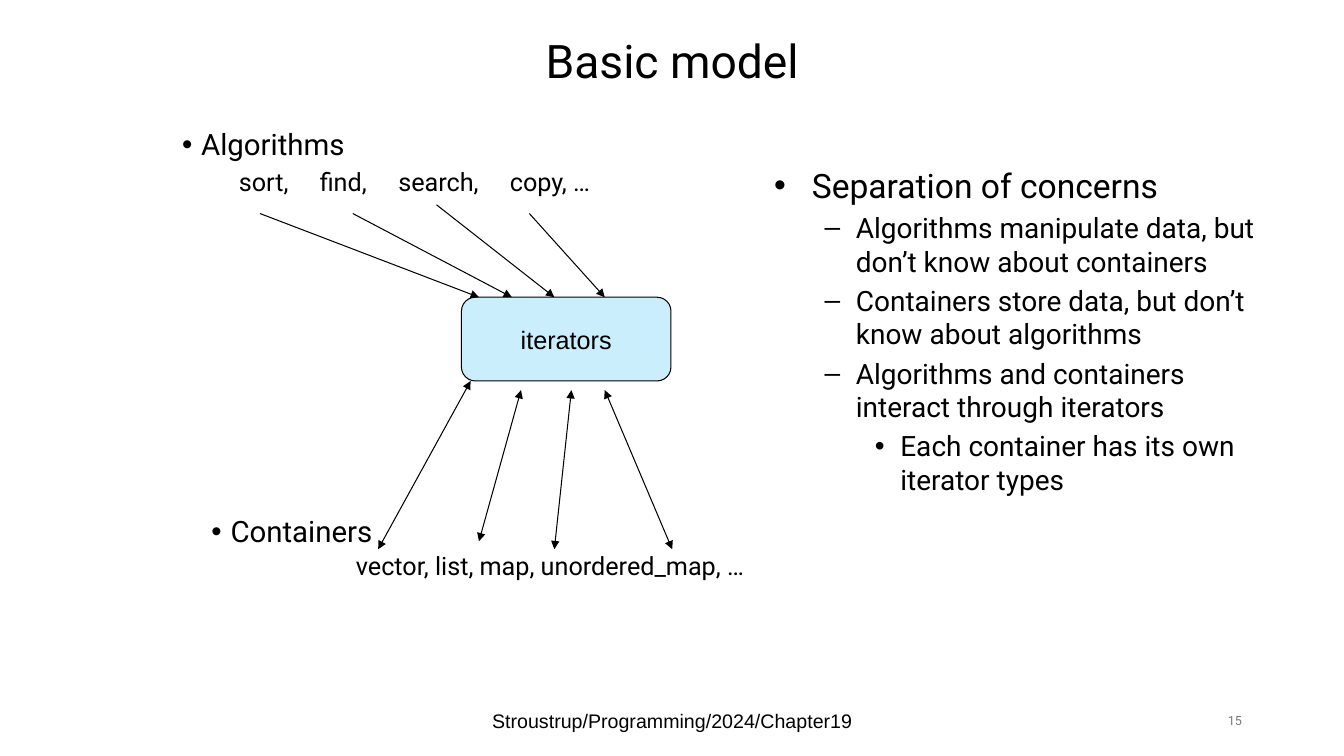
import pptx
import pptx.util
import pptx.dml.color
import pptx.enum.shapes
import pptx.enum.text
import pptx.oxml.ns
from lxml import etree

COLORS = {"black": "000000", "grey": "797979", "box": "CAEEFB"}
Cm, Pt = pptx.util.Cm, pptx.util.Pt
ALIGN = pptx.enum.text.PP_ALIGN
ANCHOR = pptx.enum.text.MSO_ANCHOR


def rgb(name):
    return pptx.dml.color.RGBColor.from_string(COLORS[name])


def add_xml(parent, tag, **attrs):
    el = etree.SubElement(parent, pptx.oxml.ns.qn(tag))
    for key, value in attrs.items():
        el.set(key, str(value))
    return el


class ModelSlide:
    def __init__(self, prs):
        self.s = prs.slides.add_slide(prs.slide_layouts[5])
        self.font = "Roboto"

    def style(self, p, size, color="black", font=None, align=None):
        p.alignment = align
        for r in p.runs:
            r.font.size = Pt(size)
            r.font.name = font or self.font
            r.font.color.rgb = rgb(color)

    def title(self, text, box):
        sp = self.s.shapes.title
        sp.left, sp.top, sp.width, sp.height = map(Cm, box)
        tf = sp.text_frame
        tf.text = text
        tf.vertical_anchor = ANCHOR.MIDDLE
        tf.paragraphs[0].line_spacing = 0.9
        self.style(tf.paragraphs[0], 33, align=ALIGN.CENTER)

    def label(self, text, box, size, **style):
        tf = self.s.shapes.add_textbox(*map(Cm, box)).text_frame
        tf.word_wrap = True
        tf.vertical_anchor = ANCHOR.MIDDLE
        tf.text = text
        self.style(tf.paragraphs[0], size, **style)

    def outline(self, box, items, spacing, before):
        """Each item: text, level, size, bullet, margin, hanging indent."""
        tf = self.s.shapes.add_textbox(*map(Cm, box)).text_frame
        tf.word_wrap = True
        for i, (text, level, size, bullet, margin, hanging) in enumerate(items):
            p = tf.add_paragraph() if i else tf.paragraphs[0]
            p.text = text
            p.level = level
            pPr = p._p.get_or_add_pPr()
            pPr.set("marL", str(Cm(margin)))
            pPr.set("indent", str(-Cm(hanging)))
            if bullet:
                add_xml(pPr, "a:buFont", typeface="Arial")
                add_xml(pPr, "a:buChar", char=bullet)
            else:
                add_xml(pPr, "a:buNone")
            p.line_spacing = spacing
            p.space_before = Pt(before if i else 0)
            self.style(p, size)

    def rounded_box(self, text, box):
        shape_type = pptx.enum.shapes.MSO_SHAPE.ROUNDED_RECTANGLE
        sp = self.s.shapes.add_shape(shape_type, *map(Cm, box))
        sp.shadow.inherit = False
        sp.fill.solid()
        sp.fill.fore_color.rgb = rgb("box")
        sp.line.color.rgb = rgb("black")
        sp.line.width = Pt(0.75)
        tf = sp.text_frame
        tf.text = text
        tf.word_wrap = False
        tf.vertical_anchor = ANCHOR.MIDDLE
        self.style(tf.paragraphs[0], 18, font="Arial", align=ALIGN.CENTER)

    def arrow(self, start, end, both=False):
        straight = pptx.enum.shapes.MSO_CONNECTOR.STRAIGHT
        c = self.s.shapes.add_connector(straight, *map(Cm, start + end))
        c.line.color.rgb = rgb("black")
        c.line.width = Pt(0.75)
        ln = c.line._get_or_add_ln()
        if both:
            add_xml(ln, "a:headEnd", type="triangle")
        add_xml(ln, "a:tailEnd", type="triangle")
        add_xml(c._element.spPr, "a:effectLst")


def main():
    prs = pptx.Presentation()
    prs.slide_width, prs.slide_height = Cm(33.87), Cm(19.05)
    slide = ModelSlide(prs)
    slide.title("Basic model", (5.51, 0, 22.86, 3.18))

    # Algorithms, each word above its arrow
    slide.outline((4.34, 3.15, 22.86, 0.9),
                  [("Algorithms", 0, 21, "•", 0.48, 0.48)], 0.9, 0)
    for word, left, width in (("sort,", 5.77, 1.9), ("find,", 7.81, 1.9),
                              ("search,", 9.79, 2.7), ("copy, …", 12.6, 2.7)):
        slide.label(word, (left, 4.05, width, 1.02), 18)

    # Containers
    slide.outline((5.08, 12.9, 22.86, 3.25),
                  [("Containers", 0, 21, "•", 0.48, 0.48),
                   ("vector, list, map, unordered_map, …", 1, 18, None, 3.64, 0)],
                  0.9, 3.75)

    # Iterators in the middle
    slide.rounded_box("iterators", (11.63, 7.49, 5.28, 2.11))
    for start, end_x in (((6.55, 5.38), 12.07), ((8.89, 5.38), 12.9),
                         ((11, 5.16), 13.97), ((13.34, 5.38), 15.24)):
        slide.arrow(start, (end_x, 7.49))
    for start, end in (((16.94, 13.84), (15.24, 9.83)),
                       ((13.97, 13.84), (14.4, 9.83)),
                       ((12.07, 13.64), (13.13, 9.83)),
                       ((9.53, 13.84), (11.86, 9.6))):
        slide.arrow(start, end, both=True)

    # Separation of concerns
    levels = ((24, "•", 0.95, 0.95), (20, "–", 2.06, 0.79), (20, "•", 3.18, 0.64))
    concerns = (
        (0, "Separation of concerns"),
        (1, "Algorithms manipulate data, but don’t know about containers"),
        (1, "Containers store data, but don’t know about algorithms"),
        (1, "Algorithms and containers interact through iterators"),
        (2, "Each container has its own iterator types"),
    )
    slide.outline((19.26, 4.02, 12.7, 11.23),
                  [(text, level, *levels[level]) for level, text in concerns],
                  1.0, 4)

    # Footer and slide number
    slide.label("Stroustrup/Programming/2024/Chapter19", (11.23, 17.65, 11.43, 1.02),
                14, font="Arial", align=ALIGN.CENTER)
    slide.label("15", (23.93, 17.65, 7.62, 1.02), 9, color="grey", align=ALIGN.RIGHT)

    prs.save("out.pptx")


if __name__ == "__main__":
    main()
